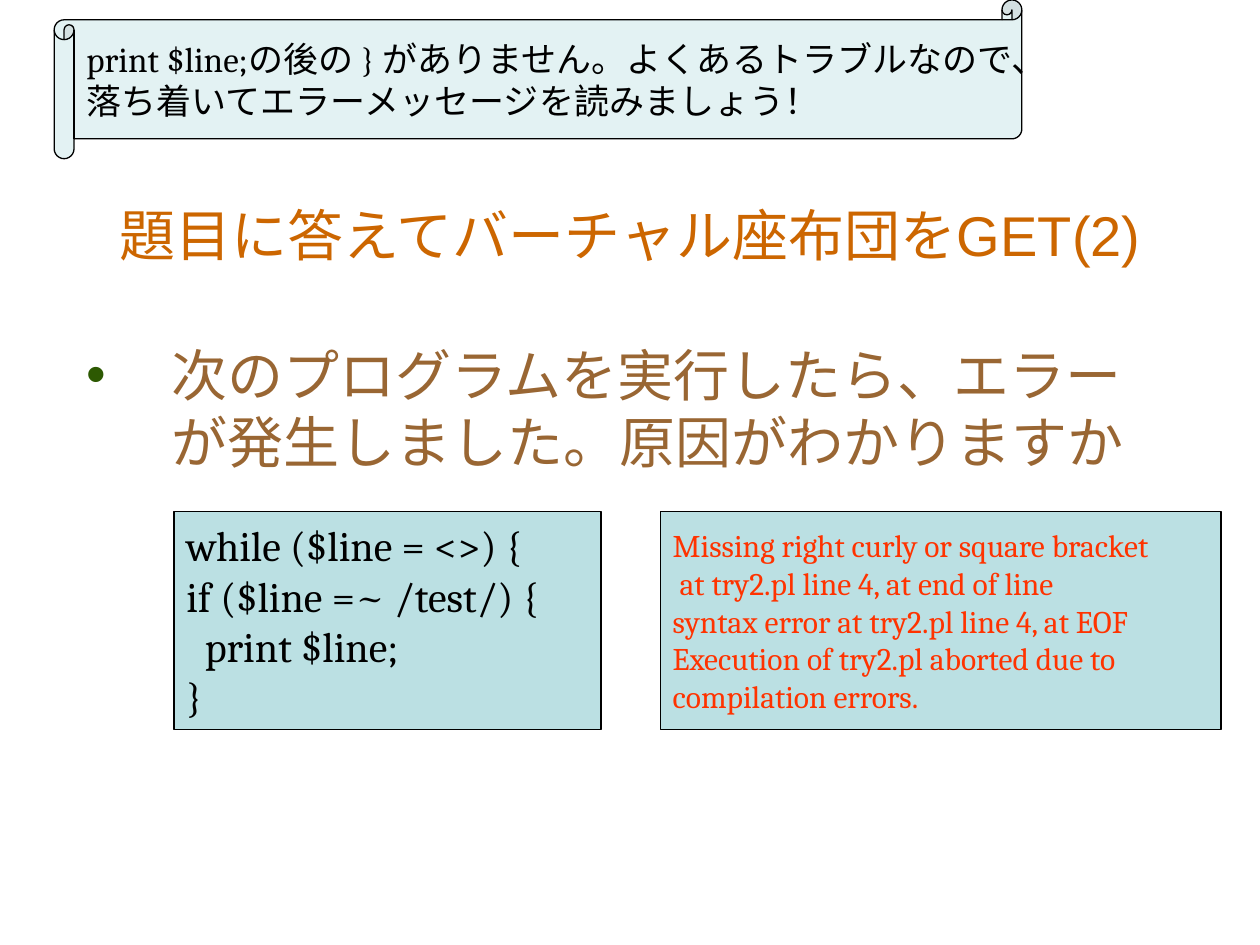
from dataclasses import dataclass

from lxml.etree import SubElement
from pptx import Presentation
from pptx.dml.color import RGBColor
from pptx.enum.shapes import MSO_SHAPE as Preset
from pptx.enum.text import MSO_ANCHOR as Anchor, PP_ALIGN as Align
from pptx.oxml.ns import qn
from pptx.util import Inches, Pt

WIDTH, HEIGHT = 10, 7.5
PANEL_TOP, PANEL_HEIGHT = 4.06, 1.73
COLORS = {
    "title": "CC6600",
    "body": "996633",
    "bullet": "2D5902",
    "panel": "BBE0E3",
    "ink": "000000",
    "error": "FF3300",
}


@dataclass
class Panel:
    preset: Preset
    left: float
    top: float
    width: float
    height: float
    lines: list[str]
    size: int
    color: str = "ink"
    opacity: int = 100


PANELS = [
    # Program
    Panel(Preset.RECTANGLE, 1.38, PANEL_TOP, 3.39, PANEL_HEIGHT,
          ["while ($line = <>) {", "if ($line =~ /test/) {", "  print $line;", "}"], 24),
    # Error message
    Panel(Preset.RECTANGLE, 5.24, PANEL_TOP, 4.45, PANEL_HEIGHT,
          ["Missing right curly or square bracket",
           " at try2.pl line 4, at end of line",
           "syntax error at try2.pl line 4, at EOF",
           "Execution of try2.pl aborted due to",
           "compilation errors."], 18, "error"),
    # Answer
    Panel(Preset.HORIZONTAL_SCROLL, 0.43, 0, 7.68, 1.26,
          ["print $line;の後の } がありません。よくあるトラブルなので、",
           "落ち着いてエラーメッセージを読みましょう！"], 20, opacity=40),
]


def rgb(name: str) -> RGBColor:
    return RGBColor.from_string(COLORS[name])


def set_font(paragraph, name: str, size: int, color: str) -> None:
    paragraph.font.name = name
    paragraph.font.size = Pt(size)
    paragraph.font.color.rgb = rgb(color)


def add_bullet(paragraph, indent: float) -> None:
    properties = paragraph._p.get_or_add_pPr()
    properties.set("marL", str(Inches(indent)))
    properties.set("indent", str(-Inches(indent)))
    bullet_color = SubElement(properties, qn("a:buClr"))
    SubElement(bullet_color, qn("a:srgbClr"), val=COLORS["bullet"])
    SubElement(properties, qn("a:buFont"), typeface="Arial")
    SubElement(properties, qn("a:buChar"), char="•")


def add_panel(slide, panel: Panel) -> None:
    box = map(Inches, (panel.left, panel.top, panel.width, panel.height))
    shape = slide.shapes.add_shape(panel.preset, *box)
    shape.shadow.inherit = False
    shape.fill.solid()
    shape.fill.fore_color.rgb = rgb("panel")
    if panel.opacity < 100:
        fill_color = shape._element.spPr.find(qn("a:solidFill"))[0]
        SubElement(fill_color, qn("a:alpha"), val=str(panel.opacity * 1000))
    shape.line.color.rgb = rgb("ink")
    shape.line.width = Pt(0.75)
    frame = shape.text_frame
    frame.word_wrap = False
    frame.vertical_anchor = Anchor.MIDDLE
    frame.text = "\n".join(panel.lines)
    for paragraph in frame.paragraphs:
        paragraph.alignment = Align.LEFT
        set_font(paragraph, "Cambria", panel.size, panel.color)


def main() -> None:
    presentation = Presentation()
    presentation.slide_width, presentation.slide_height = Inches(WIDTH), Inches(HEIGHT)
    slide = presentation.slides.add_slide(presentation.slide_layouts[5])

    # Title
    title = slide.shapes.title
    title.left, title.top = Inches(0.75), Inches(1.23)
    title.width, title.height = Inches(0.85 * WIDTH), Inches(1.25)
    title.text_frame.text = "題目に答えてバーチャル座布団をGET(2)"
    title.text_frame.vertical_anchor = Anchor.MIDDLE
    heading = title.text_frame.paragraphs[0]
    heading.alignment = Align.CENTER
    set_font(heading, "Arial", 32, "title")

    # Question
    body = slide.shapes.add_textbox(Inches(0.59), Inches(2.65), Inches(0.85 * WIDTH), Inches(3.27))
    body.text_frame.word_wrap = True
    question = body.text_frame.paragraphs[0]
    question.text = "次のプログラムを実行したら、エラーが発生しました。原因がわかりますか"
    add_bullet(question, 0.67)
    set_font(question, "Arial", 32, "body")

    for panel in PANELS:
        add_panel(slide, panel)

    presentation.save("out.pptx")


if __name__ == "__main__":
    main()
